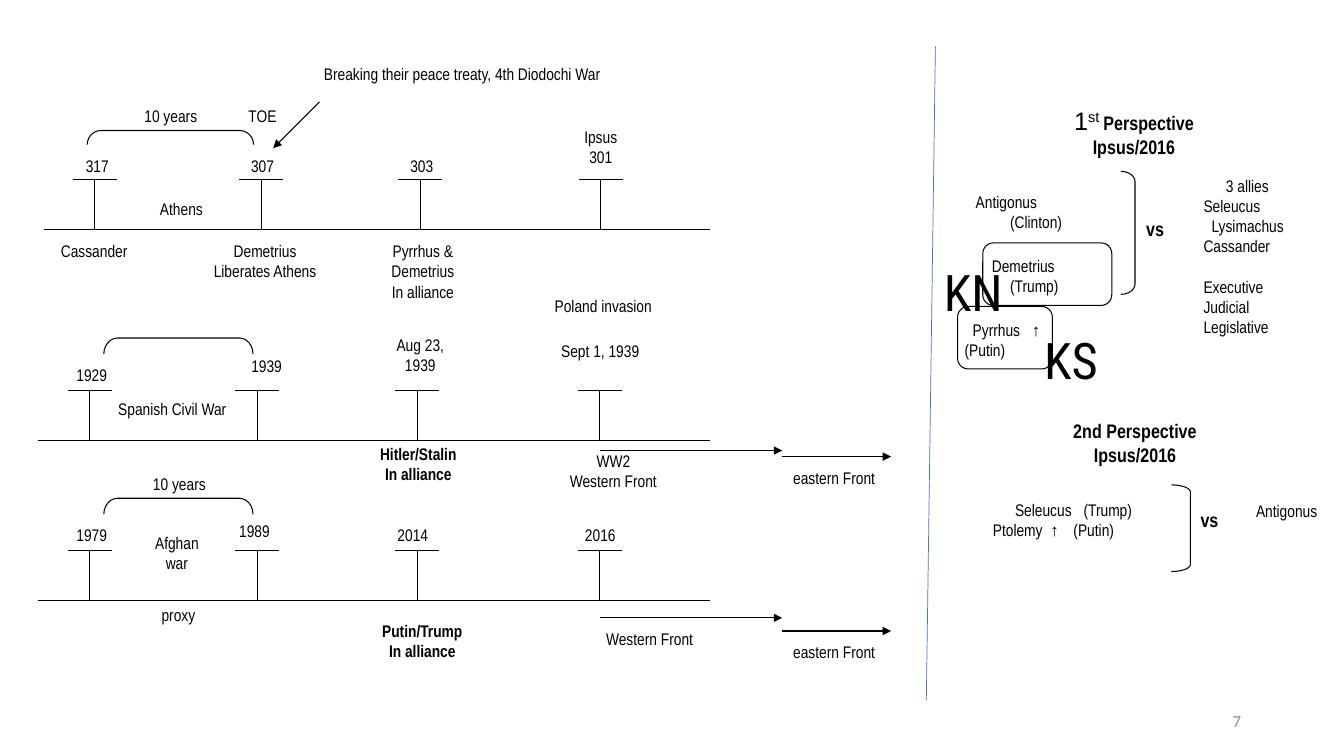
from dataclasses import dataclass
from typing import NamedTuple

from lxml import etree
from pptx import Presentation
from pptx import util as u
from pptx.dml.color import RGBColor
from pptx.enum import shapes, text
from pptx.oxml import ns

# The slide is a grid of 80 columns by 45 rows; every length is in cells.
COLS, ROWS = 80, 45
WIDTH, HEIGHT = u.Inches(13.33), u.Inches(7.5)
LEFT, CENTER, RIGHT = text.PP_ALIGN.LEFT, text.PP_ALIGN.CENTER, text.PP_ALIGN.RIGHT
KIND = shapes.MSO_SHAPE


@dataclass(frozen=True)
class Theme:
    ink: str = "000000"
    divider: str = "4472C4"
    page: str = "8C8C8C"
    thin: float = 0.5
    line: float = 0.75
    inset: float = 0.24
    section_gap: float = 14.5


THEME = Theme()
BODY = {"name": "Arial Narrow", "size": u.Pt(12), "bold": False}
STRONG = BODY | {"bold": True}
HEAD = STRONG | {"size": u.Pt(14)}
ORDINAL = {"name": "Arial", "size": u.Pt(18), "bold": False}
KING = {"name": "Roboto Condensed", "size": u.Pt(36), "bold": False}
PAGE = {"name": "Calibri", "size": u.Pt(12), "bold": False}


class Run(NamedTuple):
    text: str
    font: dict
    raised: bool = False


class Timeline(NamedTuple):
    start: float
    y: float
    ticks: tuple[float, ...]


class Outline(NamedTuple):
    kind: KIND
    box: tuple[float, float, float, float]
    bend: float
    turn: int = 0


class Line(NamedTuple):
    start: tuple[float, float]
    end: tuple[float, float]
    arrow: bool = True
    color: str = THEME.ink
    width: float = THEME.line


class Label(NamedTuple):
    """Lines are parted by newlines, or given as tuples of runs; tabs are per line."""
    box: tuple[float, float, float, float]
    lines: str | tuple[tuple[Run, ...], ...]
    font: dict = BODY
    align: text.PP_ALIGN = CENTER
    tabs: tuple[tuple[float, ...], ...] = ()
    gap_before: int = -1
    wrap: bool = True
    color: str = THEME.ink


TIMELINES = (
    Timeline(2.64, 13.68, (5.64, 15.54, 25.02, 35.76)),
    Timeline(2.28, 26.22, (5.34, 15.3, 24.84, 35.7)),
    Timeline(2.28, 35.76, (5.34, 15.3, 24.84, 35.7)),
)
TIMELINE_END, STEM, HALF_CAP = 42.24, 3, 1.3

OUTLINES = (
    Outline(KIND.LEFT_BRACKET, (9.72, 3.24, 0.84, 9.9), 0.98, 90),
    Outline(KIND.LEFT_BRACKET, (10.14, 16.16, 0.96, 8.88), 0.85, 90),
    Outline(KIND.LEFT_BRACKET, (10.14, 25.7, 0.96, 8.88), 0.85, 90),
    Outline(KIND.LEFT_BRACKET, (66.72, 10.2, 0.84, 7.32), 0.72, 180),
    Outline(KIND.LEFT_BRACKET, (69.72, 28.86, 1.14, 5.16), 0.37, 180),
    Outline(KIND.ROUNDED_RECTANGLE, (57, 18.24, 5.64, 3.72), 0.17),
    Outline(KIND.ROUNDED_RECTANGLE, (58.5, 14.46, 7.68, 3.72), 0.17),
)

LINES = (
    Line((19.02, 6.06), (16.26, 8.82)),
    Line((35.7, 26.82), (46.56, 26.82)),
    Line((46.56, 27.18), (53.04, 27.18)),
    Line((35.7, 36.78), (46.56, 36.78)),
    Line((46.56, 37.56), (53.04, 37.56)),
    Line((55.68, 2.76), (55.14, 41.7), False, THEME.divider, THEME.thin),
)

LABELS = (
    # Diodochi wars
    Label((16.26, 3.54, 22.5, 1.92), "Breaking their peace treaty, 4th Diodochi War"),
    Label((7.8, 6.06, 4.74, 1.92), "10 years"),
    Label((14.22, 6.06, 2.82, 1.92), "TOE"),
    Label((4.38, 9, 2.82, 1.92), "317"),
    Label((14.22, 9, 2.82, 1.92), "307"),
    Label((23.7, 9, 2.82, 1.92), "303"),
    Label((33.18, 7.32, 5.16, 3.6), "Ipsus\n301"),
    Label((7.8, 11.58, 6, 1.92), "Athens"),
    Label((2.64, 14.1, 5.94, 1.92), "Cassander"),
    Label((11.7, 14.1, 8.16, 3.42), "Demetrius\nLiberates Athens"),
    Label((21.72, 14.1, 6.9, 4.68), "Pyrrhus &\nDemetrius\nIn alliance"),
    # World War II
    Label((4.02, 21.48, 2.88, 1.98), "1929"),
    Label((13.8, 20.96, 4.14, 1.98), "1939"),
    Label((22.56, 19.68, 4.92, 3.78), "Aug 23,\n1939"),
    Label((32.52, 17.34, 6.78, 2.22), "Poland invasion"),
    Label((33.12, 20.04, 5.22, 3.42), "Sept 1, 1939"),
    Label((6.3, 23.52, 7.92, 2.34), "Spanish Civil War"),
    Label((21.42, 26.16, 6.96, 3.06), "Hitler/Stalin\nIn alliance", STRONG),
    Label((33.12, 26.58, 6.78, 3.06), "WW2\nWestern Front"),
    Label((46.26, 27.6, 6.78, 1.92), "eastern Front"),
    # Present day
    Label((8.28, 27.96, 4.8, 1.98), "10 years"),
    Label((4.02, 31.02, 2.88, 1.98), "1979"),
    Label((13.08, 30.78, 4.14, 1.74), "1989"),
    Label((22.74, 31.02, 3.66, 1.98), "2014"),
    Label((33.12, 31.02, 5.22, 1.98), "2016"),
    Label((7.5, 31.44, 6.06, 4.14), "Afghan\nwar"),
    Label((7.14, 35.76, 6.96, 2.4), "proxy"),
    Label((21.66, 36.72, 6.96, 3.06), "Putin/Trump\nIn alliance", STRONG),
    Label((35.28, 37.2, 6.78, 1.56), "Western Front"),
    Label((46.26, 37.98, 6.78, 1.92), "eastern Front"),
    # First perspective
    Label((57.18, 6, 20.64, 3.54),
          ((Run("1", ORDINAL), Run("st ", ORDINAL, True), Run("Perspective", HEAD)),
           (Run("Ipsus/2016", HEAD),))),
    Label((57.84, 11.16, 8.46, 9.3), "Antigonus\n\t(Clinton)", align=LEFT,
          tabs=((), (2.04,))),
    Label((58.8, 15, 7.2, 2.82), "Demetrius\n\t(Trump)", align=LEFT, tabs=((), (1.08,))),
    Label((57.18, 18.78, 5.28, 2.82),
          ((Run("\tPyrrhus\t", BODY), Run("↑", STRONG)), (Run("(Putin)", BODY),)),
          align=LEFT, tabs=((0.48, 4),)),
    Label((67.98, 12.66, 2.52, 2.46), "vs", HEAD, LEFT),
    Label((71.4, 10.2, 5.7, 1.8), "3 allies"),
    Label((71.4, 11.42, 5.7, 9.58),
          "Seleucus\n\tLysimachus\nCassander\nExecutive\nJudicial\nLegislative",
          align=LEFT, tabs=((), (0.48,)), gap_before=3),
    Label((55.2, 15.24, 5.46, 3.8), "KN", KING, wrap=False),
    Label((61.02, 19.32, 5.46, 3.8), "KS", KING, wrap=False),
    # Second perspective
    Label((56.04, 24.72, 23.04, 3.54), "2nd Perspective\nIpsus/2016", HEAD),
    Label((58.86, 29.52, 10.5, 3.78),
          ((Run("\tSeleucus\t(Trump)", BODY),),
           (Run("Ptolemy\t", BODY), Run("↑\t", STRONG), Run("(Putin)", BODY))),
          align=LEFT, tabs=((1.32, 5.4), (3.42, 4.8))),
    Label((71.22, 30, 2.52, 2.46), "vs", HEAD, LEFT),
    Label((74.1, 29.58, 4.98, 3.24), "Antigonus"),
    Label((56.52, 42.05, 17.6, 1.7), "7", PAGE, RIGHT, color=THEME.page),
)


def across(cols: float) -> int:
    return round(WIDTH * cols / COLS)


def down(rows: float) -> int:
    return round(HEIGHT * rows / ROWS)


def place(box: tuple[float, float, float, float]) -> tuple[int, ...]:
    x, y, w, h = box
    return across(x), down(y), across(w), down(h)


def draw_line(s, line: Line) -> None:
    (x1, y1), (x2, y2) = line.start, line.end
    c = s.shapes.add_connector(shapes.MSO_CONNECTOR.STRAIGHT,
                               across(x1), down(y1), across(x2), down(y2))
    c.line.color.rgb = RGBColor.from_string(line.color)
    c.line.width = u.Pt(line.width)
    if line.arrow:
        etree.SubElement(c.line._get_or_add_ln(), ns.qn("a:tailEnd"), type="triangle")
    etree.SubElement(c._element.spPr, ns.qn("a:effectLst"))


def draw_timeline(s, row: Timeline) -> None:
    cap = row.y - STEM
    draw_line(s, Line((row.start, row.y), (TIMELINE_END, row.y), False))
    for x in row.ticks:
        draw_line(s, Line((x, cap), (x, row.y), False))
        draw_line(s, Line((x - HALF_CAP, cap), (x + HALF_CAP, cap), False))


def draw_outline(s, outline: Outline) -> None:
    sp = s.shapes.add_shape(outline.kind, *place(outline.box))
    sp.adjustments[0] = outline.bend
    sp.rotation = outline.turn
    sp.shadow.inherit = False
    sp.fill.background()
    sp.line.color.rgb = RGBColor.from_string(THEME.ink)
    sp.line.width = u.Pt(THEME.line)


def add_tabs(p, stops: tuple[float, ...]) -> None:
    tabs = etree.SubElement(p._p.get_or_add_pPr(), ns.qn("a:tabLst"))
    for stop in stops:
        etree.SubElement(tabs, ns.qn("a:tab"), pos=str(across(stop)), algn="l")


def draw_label(s, label: Label) -> None:
    tf = s.shapes.add_textbox(*place(label.box)).text_frame
    tf.word_wrap = label.wrap
    if label.wrap:
        for side in ("left", "top", "right", "bottom"):
            setattr(tf, f"margin_{side}", across(THEME.inset))
    lines = label.lines
    if isinstance(lines, str):
        lines = tuple((Run(part, label.font),) for part in lines.split("\n"))
    for i, runs in enumerate(lines):
        p = tf.add_paragraph() if i else tf.paragraphs[0]
        p.alignment = label.align
        if i == label.gap_before:
            p.space_before = u.Pt(THEME.section_gap)
        if i < len(label.tabs):
            add_tabs(p, label.tabs[i])
        for run in runs:
            r = p.add_run()
            r.text = run.text
            for name, value in run.font.items():
                setattr(r.font, name, value)
            r.font.color.rgb = RGBColor.from_string(label.color)
            if run.raised:
                r.font._element.set("baseline", "30000")


def main() -> None:
    prs = Presentation()
    prs.slide_width, prs.slide_height = WIDTH, HEIGHT
    s = prs.slides.add_slide(prs.slide_layouts[6])
    for draw, items in ((draw_timeline, TIMELINES), (draw_outline, OUTLINES),
                        (draw_line, LINES), (draw_label, LABELS)):
        for item in items:
            draw(s, item)
    prs.save("out.pptx")


if __name__ == "__main__":
    main()
